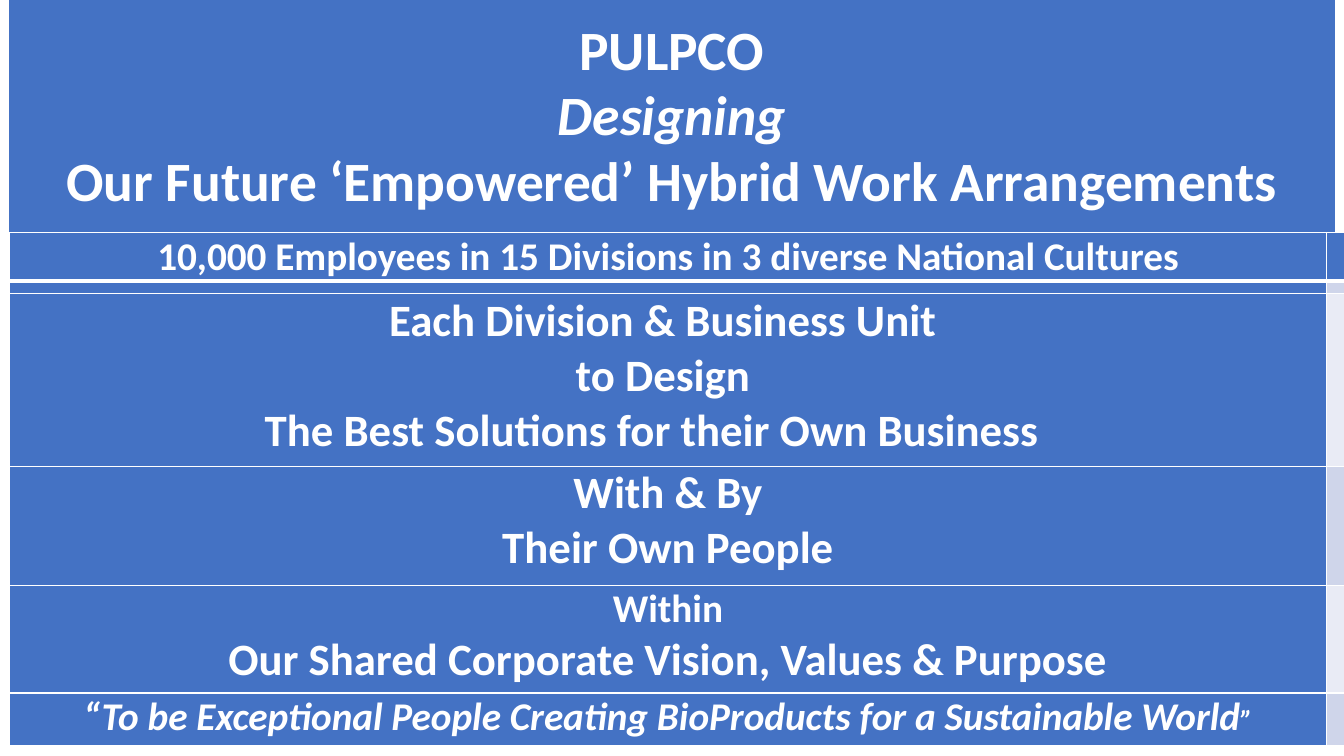
from lxml.etree import SubElement
from pptx import Presentation
from pptx.dml.color import RGBColor
from pptx.enum.text import MSO_ANCHOR, MSO_AUTO_SIZE, PP_ALIGN
from pptx.oxml.ns import qn
from pptx.util import Inches, Pt

WHITE = RGBColor(0xFF, 0xFF, 0xFF)
BLUE = RGBColor(0x44, 0x72, 0xC4)
BAND_DARK = RGBColor(0xCF, 0xD5, 0xEA)
BAND_LIGHT = RGBColor(0xE9, 0xEB, 0xF5)

TITLE_LINES = [
    ("PULPCO", False),
    ("Designing", True),
    ("Our Future ‘Empowered’ Hybrid Work Arrangements", False),
]
MESSAGE_ROWS = [
    (0.47, [[("10,000 Employees in 15 Divisions in 3 diverse National Cultures", 28, False)]]),
    (0.13, []),
    (1.71, [
        [("Each Division & Business Unit ", 32, False)],
        [("to Design ", 32, False)],
        [("The Best Solutions for their Own Business", 32, False), ("\t", 20, False)],
    ]),
    (1.18, [[("With & By", 32, False)], [("Their Own People", 32, False)]]),
    (1.07, [
        [("Within", 28, False)],
        [("Our Shared Corporate Vision, Values & Purpose", 32, False)],
    ]),
    (0.52, [[
        ("“To be Exceptional People Creating BioProducts for a Sustainable World", 28, True),
        ("”", 20, True),
    ]]),
]
COLUMN_WIDTHS = (13.07, 0.18)


def add_text(paragraph, text, size=32, italic=False, bold=True, color=WHITE):
    """Append a formatted run to a centred paragraph."""
    paragraph.alignment = PP_ALIGN.CENTER
    run = paragraph.add_run()
    run.text = text
    run.font.name = "Calibri"
    run.font.size = Pt(size)
    run.font.bold = bold
    run.font.italic = italic
    run.font.color.rgb = color


def set_borders(cell, top, bottom):
    """Give a cell white borders, with top and bottom widths in points."""
    properties = cell._tc.get_or_add_tcPr()
    for side, width in (("L", 1), ("R", 1), ("T", top), ("B", bottom)):
        line = SubElement(properties, qn(f"a:ln{side}"), w=str(Pt(width)))
        fill = SubElement(line, qn("a:solidFill"))
        SubElement(fill, qn("a:srgbClr"), val=str(WHITE))


def fill_cell(cell, paragraphs, color, top, bottom):
    """Format one table cell and write its paragraphs."""
    cell.margin_left = cell.margin_right = Inches(0.08)
    cell.margin_top = cell.margin_bottom = 0
    set_borders(cell, top, bottom)
    cell.fill.solid()
    cell.fill.fore_color.rgb = color
    frame = cell.text_frame
    if not paragraphs:
        SubElement(frame.paragraphs[0]._p, qn("a:endParaRPr"), sz="400")
    for index, runs in enumerate(paragraphs):
        paragraph = frame.add_paragraph() if index else frame.paragraphs[0]
        for text, size, italic in runs:
            add_text(paragraph, text, size=size, italic=italic)


def add_title(slide, left, top, width, height):
    """Place the blue title banner in the given box."""
    title = slide.shapes.title
    title.left, title.top = Inches(left), Inches(top)
    title.width, title.height = Inches(width), Inches(height)
    title.fill.solid()
    title.fill.fore_color.rgb = BLUE
    frame = title.text_frame
    frame.auto_size = MSO_AUTO_SIZE.NONE
    frame.word_wrap = True
    frame.vertical_anchor = MSO_ANCHOR.MIDDLE
    paragraph = frame.paragraphs[0]
    paragraph.line_spacing = 0.98
    for index, (text, italic) in enumerate(TITLE_LINES):
        if index:
            paragraph.add_line_break()
        add_text(paragraph, text, size=39.6, italic=italic)


def add_messages(slide, left, top):
    """Place the table of messages with its narrow banded column."""
    height = sum(row_height for row_height, _ in MESSAGE_ROWS)
    table = slide.shapes.add_table(
        len(MESSAGE_ROWS), len(COLUMN_WIDTHS), Inches(left), Inches(top),
        Inches(sum(COLUMN_WIDTHS)), Inches(height),
    ).table
    for column, width in zip(table.columns, COLUMN_WIDTHS):
        column.width = Inches(width)
    for index, (row_height, paragraphs) in enumerate(MESSAGE_ROWS):
        table.rows[index].height = Inches(row_height)
        band = BAND_DARK if index % 2 else BAND_LIGHT
        top_width = 3 if index == 1 else 1
        bottom_width = 3 if index == 0 else 1
        fill_cell(table.cell(index, 0), paragraphs, BLUE, top_width, bottom_width)
        fill_cell(table.cell(index, 1), [], band if index else BLUE, top_width, bottom_width)


def main():
    """Build and save the presentation."""
    presentation = Presentation()
    presentation.slide_width = Inches(13.33)
    presentation.slide_height = Inches(7.5)
    slide = presentation.slides.add_slide(presentation.slide_layouts[5])
    add_title(slide, 0.09, 0, 13.15, 2.31)
    add_messages(slide, 0.09, 2.31)
    presentation.save("out.pptx")


if __name__ == "__main__":
    main()
